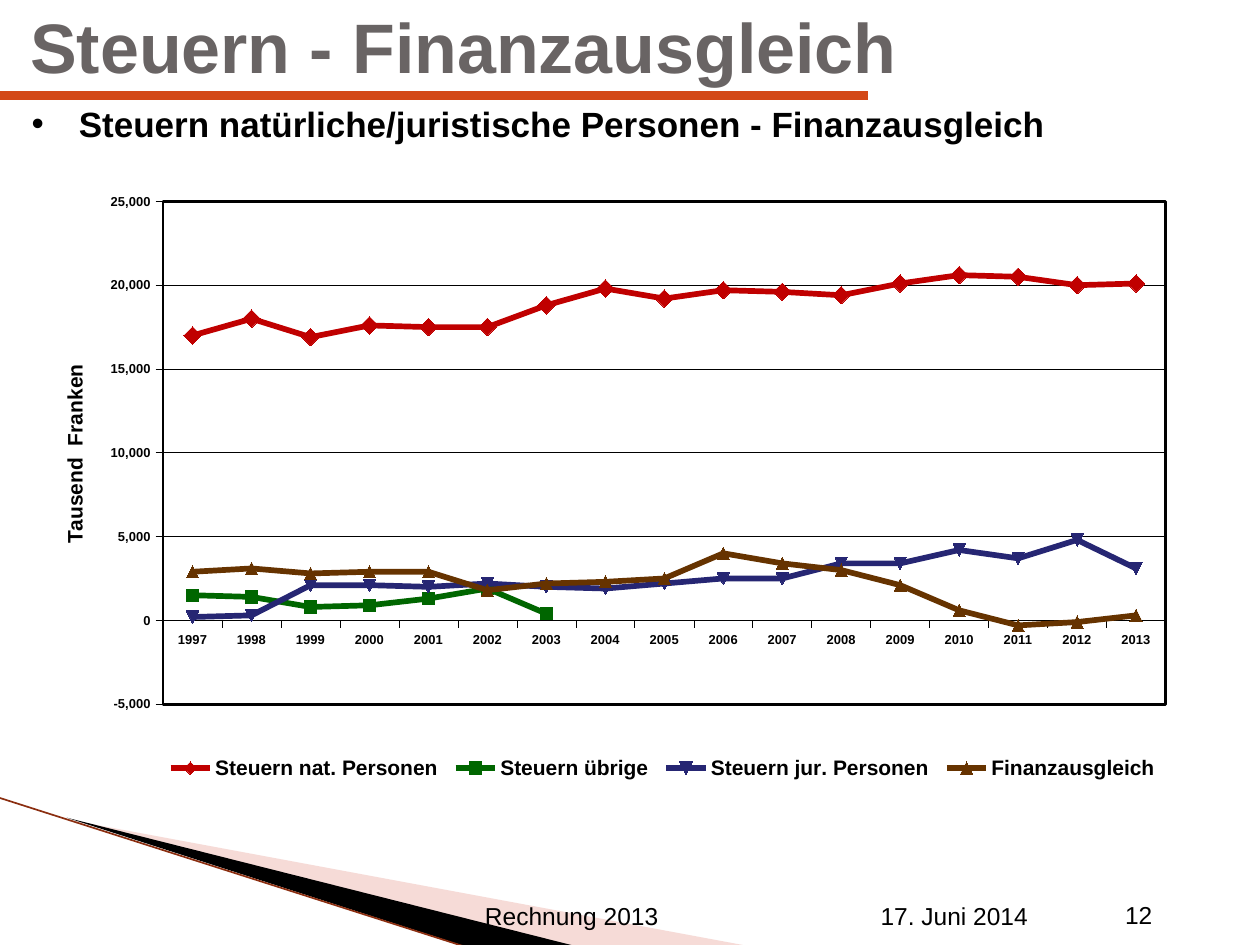
from dataclasses import dataclass

from pptx import Presentation
from pptx.chart.data import CategoryChartData
from pptx.dml.color import RGBColor
from pptx.enum.chart import (XL_CHART_TYPE as ChartType, XL_LEGEND_POSITION as LegendPos,
                             XL_MARKER_STYLE as Marker, XL_TICK_MARK as Tick)
from pptx.enum.shapes import MSO_CONNECTOR as Connector
from pptx.enum.text import MSO_ANCHOR as Anchor, MSO_AUTO_SIZE as AutoSize, PP_ALIGN as Align
from pptx.oxml import parse_xml
from pptx.oxml.ns import nsdecls, qn
from pptx.oxml.xmlchemy import OxmlElement
from pptx.util import Pt

FONT = "Arial"
COLORS = {
    "black": "000000", "title": "696464", "rule": "D34817",
    "wedge": "E9A59D", "edge": "8B2E10",
    "natural": "C00000", "other": "006600", "legal": "262673", "equalization": "663300",
}


@dataclass
class Box:
    left: float
    top: float
    width: float
    height: float

    def emu(self) -> list:
        return [Pt(v) for v in (self.left, self.top, self.width, self.height)]


@dataclass
class Series:
    name: str
    color: str
    marker: Marker
    size: int
    values: list


@dataclass
class Wedge:
    points: list
    color: str
    alpha: int


@dataclass
class Rule:
    start: tuple
    end: tuple
    color: str
    width: float


YEARS = [str(year) for year in range(1997, 2014)]
SERIES = [
    Series("Steuern nat. Personen", "natural", Marker.DIAMOND, 10,
           [17000, 18000, 16900, 17600, 17500, 17500, 18800, 19800, 19200,
            19700, 19600, 19400, 20100, 20600, 20500, 20000, 20100]),
    Series("Steuern übrige", "other", Marker.SQUARE, 7,
           [1500, 1400, 800, 900, 1300, 1900, 400] + [None] * 10),
    Series("Steuern jur. Personen", "legal", Marker.AUTOMATIC, 7,
           [200, 300, 2100, 2100, 2000, 2200, 2000, 1900, 2200,
            2500, 2500, 3400, 3400, 4200, 3700, 4800, 3100]),
    Series("Finanzausgleich", "equalization", Marker.TRIANGLE, 7,
           [2900, 3100, 2800, 2900, 2900, 1800, 2200, 2300, 2500,
            4000, 3400, 3000, 2100, 600, -300, -100, 300]),
]
WEDGES = [
    Wedge([(39.6, 468.5), (428.4, 540.7), (328.3, 540.7)], "wedge", 40),
    Wedge([(38.2, 467.3), (329, 540.7), (267.8, 541.4)], "black", 100),
]
RULES = [
    Rule((-0.7, 455.8), (267.1, 541.4), "edge", 0.95),
    Rule((0, 54.7), (496.1, 54.7), "rule", 5),
]
FOOTERS = [
    ("Rechnung 2013", Box(270, 511.2, 226, 28.8)),
    ("17. Juni 2014", Box(496.1, 511.2, 139.7, 28.8)),
    ("12", Box(635.8, 510.5, 50.4, 28.8)),
]


def rgb(name: str) -> RGBColor:
    return RGBColor.from_string(COLORS[name])


def style_font(font, size: float, color: str = "black", bold: bool = True) -> None:
    font.name, font.size, font.bold = FONT, Pt(size), bold
    font.color.rgb = rgb(color)


def style_line(line, color: str, width: float) -> None:
    line.color.rgb = rgb(color)
    line.width = Pt(width)


def set_text(s, text: str, box: Box, size: float, color: str = "black",
             bold: bool = True, anchor: Anchor = Anchor.TOP) -> None:
    s.left, s.top, s.width, s.height = box.emu()
    tf = s.text_frame
    tf.text = text
    tf.word_wrap, tf.auto_size, tf.vertical_anchor = True, AutoSize.NONE, anchor
    p = tf.paragraphs[0]
    p.alignment, p.space_before = Align.LEFT, Pt(0)
    style_font(p.runs[0].font, size, color, bold)


def add_wedge(slide, wedge: Wedge) -> None:
    first, *rest = [(Pt(x), Pt(y)) for x, y in wedge.points]
    builder = slide.shapes.build_freeform(*first)
    builder.add_line_segments(rest, close=True)
    s = builder.convert_to_shape()
    s.shadow.inherit = False
    s.line.fill.background()
    s.fill.solid()
    s.fill.fore_color.rgb = rgb(wedge.color)
    if wedge.alpha < 100:
        alpha = OxmlElement("a:alpha")
        alpha.set("val", str(wedge.alpha * 1000))
        s.element.find(".//" + qn("a:srgbClr")).append(alpha)


def add_rule(slide, rule: Rule) -> None:
    ends = [Pt(v) for v in (*rule.start, *rule.end)]
    s = slide.shapes.add_connector(Connector.STRAIGHT, *ends)
    style_line(s.line, rule.color, rule.width)
    s.element.spPr.append(OxmlElement("a:effectLst"))


def set_layout(element, index: int, **fractions) -> None:
    """Place a chart part by fractions of the chart area."""
    for old in element.findall(qn("c:layout")):
        element.remove(old)
    target = '<c:layoutTarget val="inner"/>' if element.tag == qn("c:plotArea") else ""
    modes = '<c:xMode val="edge"/><c:yMode val="edge"/>'
    sizes = "".join(f'<c:{k} val="{v}"/>' for k, v in fractions.items())
    element.insert(index, parse_xml(
        f'<c:layout {nsdecls("c")}><c:manualLayout>{target}{modes}{sizes}'
        '</c:manualLayout></c:layout>'))


def add_tax_chart(slide, box: Box) -> None:
    data = CategoryChartData(number_format="#,##0")
    data.categories = YEARS
    for series in SERIES:
        data.add_series(series.name, series.values)
    chart = slide.shapes.add_chart(ChartType.LINE_MARKERS, *box.emu(), data).chart
    chart.has_title = False
    style_font(chart.font, 7.4)

    # Axes
    for axis in (chart.category_axis, chart.value_axis):
        axis.major_tick_mark, axis.minor_tick_mark = Tick.OUTSIDE, Tick.NONE
        style_font(axis.tick_labels.font, 7.4)
        style_line(axis.format.line, "black", 0.37)
    axis = chart.value_axis
    axis.minimum_scale, axis.maximum_scale, axis.major_unit = -5000, 25000, 5000
    axis.tick_labels.number_format = "#,##0"
    axis.tick_labels.number_format_is_linked = False
    style_line(axis.major_gridlines.format.line, "black", 0.37)
    axis.axis_title.text_frame.text = "Tausend  Franken"
    style_font(axis.axis_title.text_frame.paragraphs[0].runs[0].font, 12)

    # Series
    chart.plots[0].vary_by_categories = False
    for series, line in zip(SERIES, chart.plots[0].series):
        line.smooth = False
        style_line(line.format.line, series.color, 3.25)
        line.marker.style, line.marker.size = series.marker, series.size
        line.marker.format.fill.solid()
        line.marker.format.fill.fore_color.rgb = rgb(series.color)
        style_line(line.marker.format.line, series.color, 0.75)

    # Legend and plot frame
    chart.has_legend = True
    chart.legend.position = LegendPos.BOTTOM
    chart.legend.include_in_layout = False
    style_font(chart.legend.font, 12)
    plot = chart.element.find(".//" + qn("c:plotArea"))
    plot.append(parse_xml(
        f'<c:spPr {nsdecls("c", "a")}><a:noFill/><a:ln w="{Pt(1.5)}"><a:solidFill>'
        f'<a:srgbClr val="{COLORS["black"]}"/></a:solidFill></a:ln></c:spPr>'))
    set_layout(plot, 0, x=0.113, y=0.054, w=0.887, h=0.746)
    set_layout(plot.find(".//" + qn("c:title")), 1, x=0.02, y=0.29)
    set_layout(chart.element.find(".//" + qn("c:legend")), 1, x=0.11, y=0.86, w=0.89, h=0.07)


def main() -> None:
    prs = Presentation()
    prs.slide_width, prs.slide_height = Pt(720), Pt(540)
    slide = prs.slides.add_slide(prs.slide_layouts[1])

    # Corner decoration and title rule
    for wedge in WEDGES:
        add_wedge(slide, wedge)
    for rule in RULES:
        add_rule(slide, rule)

    # Title and subtitle
    set_text(slide.shapes.title, "Steuern - Finanzausgleich",
             Box(10.1, -4.3, 536.4, 60.5), 40, "title", anchor=Anchor.MIDDLE)
    body = slide.placeholders[1]
    body.text_frame.text = ""
    pPr = body.text_frame.paragraphs[0]._p.get_or_add_pPr()
    pPr.set("marL", "0")
    pPr.set("indent", "0")
    pPr.append(OxmlElement("a:buNone"))
    set_text(body, "Steuern natürliche/juristische Personen - Finanzausgleich",
             Box(10.8, 54.7, 689, 45.4), 20)

    add_tax_chart(slide, Box(20.2, 94.3, 646.6, 385.2))

    # Footer
    for text, box in FOOTERS:
        set_text(slide.shapes.add_textbox(*box.emu()), text, box, 14, bold=False)
    prs.save("out.pptx")


if __name__ == "__main__":
    main()
